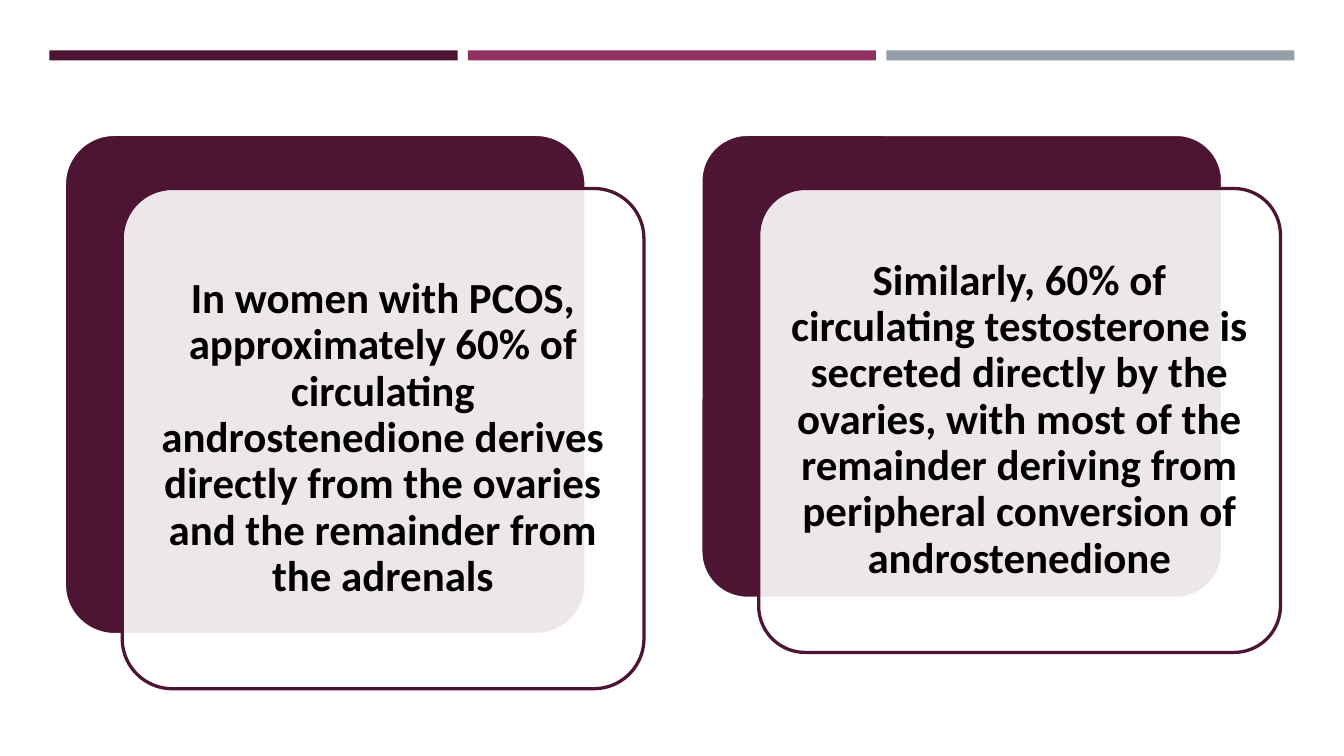
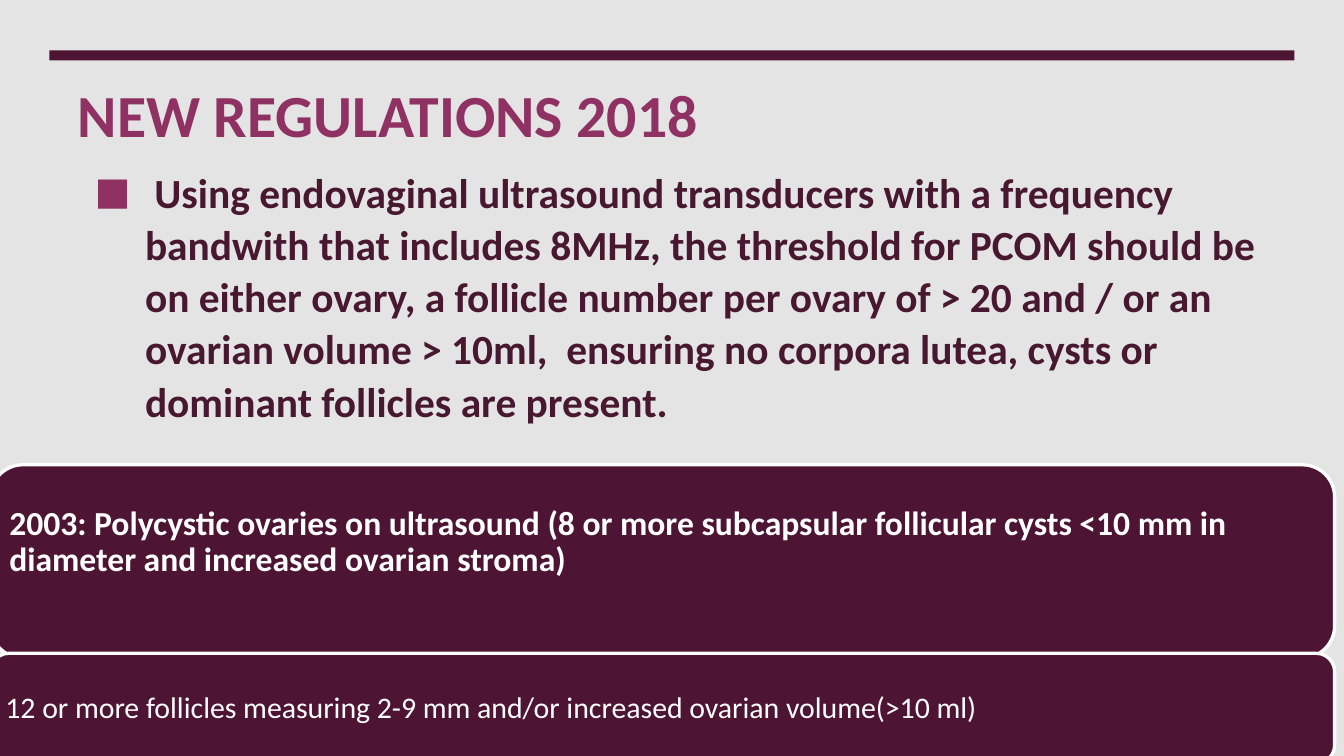
"""Builds two slides about ovarian androgens and ultrasound criteria."""
from dataclasses import dataclass

from lxml import etree
from pptx import Presentation
from pptx.dml.color import RGBColor
from pptx.enum.shapes import MSO_SHAPE
from pptx.enum.text import MSO_ANCHOR, MSO_AUTO_SIZE, PP_ALIGN
from pptx.oxml.ns import qn
from pptx.util import Pt

RECTANGLE, ROUNDED = MSO_SHAPE.RECTANGLE, MSO_SHAPE.ROUNDED_RECTANGLE
TOP, MIDDLE = MSO_ANCHOR.TOP, MSO_ANCHOR.MIDDLE
LEFT, CENTER = PP_ALIGN.LEFT, PP_ALIGN.CENTER
NO_AUTOFIT = MSO_AUTO_SIZE.NONE

FONT = "Calibri"
PLUM, MAGENTA, GREY = "4D1434", "903163", "969FA7"
WHITE, BLACK, BODY_COLOR, PALE_GREY = "FFFFFF", "000000", "481831", "E4E4E4"
TITLE_LAYOUT, BLANK_LAYOUT = 1, 6
BAND_LEFT, BAND_TOP, BAND_WIDTH, BAND_HEIGHT, BAND_GAP = 26.5, 27, 667, 5.3, 5.5
CARD_TOP, CARD_WIDTH, CARD_SHIFT_X, CARD_SHIFT_Y = 72, 279.5, 31, 29


@dataclass
class Box:
    """Position and size in points."""
    left: float
    top: float
    width: float
    height: float

    def lengths(self) -> tuple:
        return Pt(self.left), Pt(self.top), Pt(self.width), Pt(self.height)

    def inset(self, margin: float) -> "Box":
        return Box(self.left + margin, self.top + margin,
                   self.width - 2 * margin, self.height - 2 * margin)


@dataclass
class TextStyle:
    """Look of one paragraph."""
    size: float
    color: str
    bold: bool = True
    align: PP_ALIGN = LEFT
    line_spacing: float = 0.9
    space_before: float = 0
    space_after: float = 0


@dataclass
class Card:
    """Overlapping pair of rounded squares with text."""
    left: float
    height: float
    text: str


@dataclass
class Panel:
    """Wide rounded bar with text."""
    top: float
    height: float
    text_inset: float
    bottom_margin: float
    style: TextStyle
    text: str


CARD_STYLE = TextStyle(23, BLACK, align=CENTER, space_after=8)
TITLE_STYLE = TextStyle(32, MAGENTA, line_spacing=1)
BODY_STYLE = TextStyle(22.2, BODY_COLOR, line_spacing=1.05, space_before=4.4, space_after=6)

CARDS = [
    Card(34.5, 268, "In women with PCOS, approximately 60% of circulating androstenedione "
         "derives directly from the ovaries and the remainder from the adrenals"),
    Card(375.5, 248.5, "Similarly, 60% of circulating testosterone is secreted directly by the "
         "ovaries, with most of the remainder deriving from peripheral conversion of "
         "androstenedione"),
]
PANELS = [
    Panel(249, 103.5, 5, 25, TextStyle(18, WHITE, space_after=6.3),
          "2003: Polycystic ovaries on ultrasound (8 or more subcapsular follicular cysts "
          "<10 mm in diameter and increased ovarian stroma)"),
    Panel(350, 59, 2.9, 5, TextStyle(16, WHITE, bold=False, space_after=5.6),
          "12 or more follicles measuring 2-9 mm and/or increased ovarian volume(>10 ml)"),
]
BODY_TEXT = (" Using endovaginal ultrasound transducers with a frequency bandwith that includes "
             "8MHz, the threshold for PCOM should be on either ovary, a follicle number per "
             "ovary of > 20 and / or an ovarian volume > 10ml,  ensuring no corpora lutea, "
             "cysts or dominant follicles are present.")


def set_color(color_format, value: str) -> None:
    color_format.rgb = RGBColor.from_string(value)


def set_background(slide, color: str) -> None:
    fill = slide.background.fill
    fill.solid()
    set_color(fill.fore_color, color)


def add_block(slide, kind, box: Box, fill: str, line: str = "", opacity: int = 100):
    shape = slide.shapes.add_shape(kind, *box.lengths())
    shape.shadow.inherit = False
    shape.fill.solid()
    set_color(shape.fill.fore_color, fill)
    if opacity < 100:
        color = shape.fill._xPr.find(qn("a:solidFill"))[0]
        etree.SubElement(color, qn("a:alpha"), val=str(opacity * 1000))
    if line:
        set_color(shape.line.color, line)
        shape.line.width = Pt(1.75)
    else:
        shape.line.fill.background()
    return shape


def write_text(shape, text: str, style: TextStyle, anchor=MIDDLE,
               margin: float = 7.2, bottom_margin: float = 7.2):
    frame = shape.text_frame
    frame.word_wrap = True
    frame.auto_size = NO_AUTOFIT
    frame.vertical_anchor = anchor
    frame.margin_left = frame.margin_right = frame.margin_top = Pt(margin)
    frame.margin_bottom = Pt(bottom_margin)
    paragraph = frame.paragraphs[0]
    paragraph.text = text
    paragraph.alignment = style.align
    paragraph.line_spacing = style.line_spacing
    paragraph.space_before = Pt(style.space_before)
    paragraph.space_after = Pt(style.space_after)
    font = paragraph.font
    font.name, font.size, font.bold = FONT, Pt(style.size), style.bold
    set_color(font.color, style.color)
    return paragraph


def fill_placeholder(shape, box: Box, text: str, style: TextStyle, anchor):
    shape.left, shape.top, shape.width, shape.height = box.lengths()
    paragraph = write_text(shape, text, style, anchor, bottom_margin=3.6)
    shape.text_frame.margin_top = Pt(3.6)
    return paragraph


def set_bullet(paragraph, character: str, color: str, percent: int,
               margin: float, indent: float) -> None:
    properties = paragraph._p.get_or_add_pPr()
    properties.set("marL", str(Pt(margin)))
    properties.set("indent", str(Pt(indent)))
    default_font = properties.find(qn("a:defRPr"))
    bullet_color = etree.Element(qn("a:buClr"))
    etree.SubElement(bullet_color, qn("a:srgbClr"), val=color)
    elements = [bullet_color,
                etree.Element(qn("a:buSzPct"), val=str(percent * 1000)),
                etree.Element(qn("a:buFont"), typeface=FONT),
                etree.Element(qn("a:buChar"), char=character)]
    for element in elements:
        if default_font is None:
            properties.append(element)
        else:
            default_font.addprevious(element)


def add_bands(slide, colors: list[str]) -> None:
    width = (BAND_WIDTH - BAND_GAP * (len(colors) - 1)) / len(colors)
    for index, color in enumerate(colors):
        left = BAND_LEFT + index * (width + BAND_GAP)
        add_block(slide, RECTANGLE, Box(left, BAND_TOP, width, BAND_HEIGHT), color)


def add_card(slide, card: Card) -> None:
    back = Box(card.left, CARD_TOP, CARD_WIDTH, card.height)
    front = Box(card.left + CARD_SHIFT_X, CARD_TOP + CARD_SHIFT_Y, CARD_WIDTH, card.height)
    for shape in (add_block(slide, ROUNDED, back, PLUM, WHITE),
                  add_block(slide, ROUNDED, front, WHITE, PLUM, opacity=90)):
        shape.adjustments[0] = 0.1
    text_box = slide.shapes.add_textbox(*front.inset(7.8).lengths())
    write_text(text_box, card.text, CARD_STYLE)


def add_panel(slide, panel: Panel) -> None:
    box = Box(-5, panel.top, 720, panel.height)
    add_block(slide, ROUNDED, box, PLUM, WHITE)
    text_box = slide.shapes.add_textbox(*box.inset(panel.text_inset).lengths())
    write_text(text_box, panel.text, panel.style, margin=5, bottom_margin=panel.bottom_margin)


def build_androgen_slide(presentation) -> None:
    slide = presentation.slides.add_slide(presentation.slide_layouts[BLANK_LAYOUT])
    set_background(slide, WHITE)
    add_bands(slide, [PLUM, MAGENTA, GREY])
    for card in CARDS:
        add_card(slide, card)


def build_regulations_slide(presentation) -> None:
    slide = presentation.slides.add_slide(presentation.slide_layouts[TITLE_LAYOUT])
    set_background(slide, PALE_GREY)
    fill_placeholder(slide.shapes.title, Box(34.5, 38, 651.5, 65),
                     "NEW REGULATIONS 2018", TITLE_STYLE, TOP)
    add_bands(slide, [PLUM])
    paragraph = fill_placeholder(slide.placeholders[1], Box(34.5, 73, 651.5, 170),
                                 BODY_TEXT, BODY_STYLE, MIDDLE)
    set_bullet(paragraph, "■", MAGENTA, 92, 36, -27)
    for panel in PANELS:
        add_panel(slide, panel)


def main() -> None:
    presentation = Presentation()
    presentation.slide_width, presentation.slide_height = Pt(720), Pt(405)
    build_androgen_slide(presentation)
    build_regulations_slide(presentation)
    presentation.save("out.pptx")


if __name__ == "__main__":
    main()
